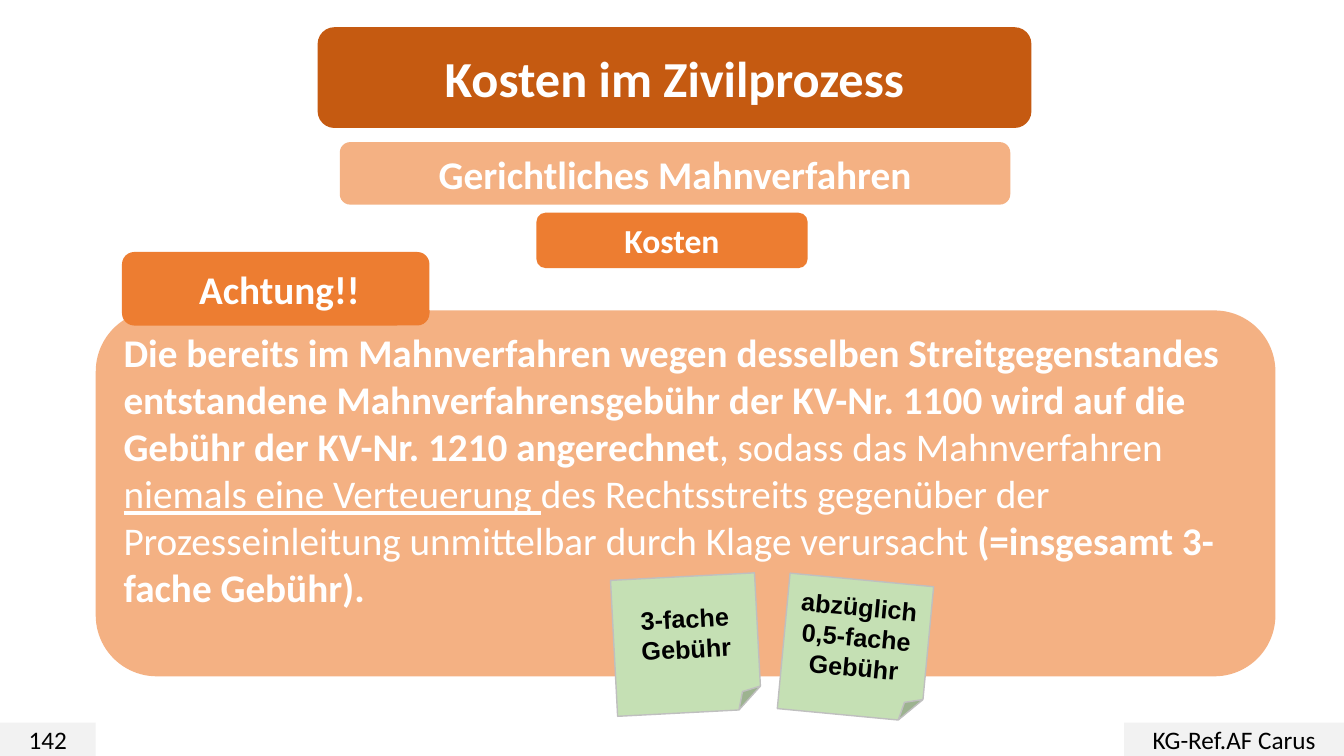
from pptx import Presentation
from pptx.dml.color import RGBColor
from pptx.enum.shapes import MSO_SHAPE
from pptx.enum.text import MSO_ANCHOR, PP_ALIGN
from pptx.util import Inches, Pt

WHITE = RGBColor(0xFF, 0xFF, 0xFF)
BLACK = RGBColor(0x00, 0x00, 0x00)
DARK_ORANGE = RGBColor(0xC5, 0x5A, 0x11)
ORANGE = RGBColor(0xED, 0x7D, 0x31)
PEACH = RGBColor(0xF4, 0xB1, 0x83)
GREEN = RGBColor(0xC5, 0xE0, 0xB4)
LIGHT_GRAY = RGBColor(0xF2, 0xF2, 0xF2)
GRAY = RGBColor(0xBF, 0xBF, 0xBF)


class SlideBuilder:
    font = "Calibri"
    note_font = "Arial"

    def __init__(self, prs):
        self.slide = prs.slides.add_slide(prs.slide_layouts[6])

    def shape(self, kind, box, fill):
        sp = self.slide.shapes.add_shape(kind, *(Inches(v) for v in box))
        sp.shadow.inherit = False
        sp.fill.solid()
        sp.fill.fore_color.rgb = fill
        sp.line.fill.background()
        tf = sp.text_frame
        tf.word_wrap = True
        tf.vertical_anchor = MSO_ANCHOR.MIDDLE
        return sp

    def run(self, p, text, size, color, font=font, bold=False, underline=False):
        r = p.add_run()
        r.text = text
        r.font.name = font
        r.font.size = Pt(size)
        r.font.color.rgb = color
        r.font.bold = bold
        r.font.underline = underline

    def heading(self, text, box, fill, size):
        sp = self.shape(MSO_SHAPE.ROUNDED_RECTANGLE, box, fill)
        p = sp.text_frame.paragraphs[0]
        p.alignment = PP_ALIGN.CENTER
        self.run(p, text, size, WHITE, bold=True)
        return sp

    def body(self, runs, box):
        sp = self.shape(MSO_SHAPE.ROUNDED_RECTANGLE, box, PEACH)
        tf = sp.text_frame
        tf.margin_bottom = Inches(0.52)
        p = tf.paragraphs[0]
        p.alignment = PP_ALIGN.LEFT
        for text, bold, underline in runs:
            self.run(p, text, 28, WHITE, bold=bold, underline=underline)

    def footer(self, text, left, width):
        sp = self.shape(MSO_SHAPE.RECTANGLE, (left, 7.17, width, 0.33), LIGHT_GRAY)
        p = sp.text_frame.paragraphs[0]
        p.alignment = PP_ALIGN.CENTER
        self.run(p, text, 18, BLACK)

    def note(self, lines, left, top, rotation):
        sp = self.shape(MSO_SHAPE.FOLDED_CORNER, (left, top, 1.43, 1.35), GREEN)
        sp.rotation = rotation
        sp.line.color.rgb = GRAY
        sp.line.width = Pt(1)
        tf = sp.text_frame
        for i, line in enumerate(lines):
            p = tf.add_paragraph() if i else tf.paragraphs[0]
            p.alignment = PP_ALIGN.CENTER
            self.run(p, line, 18, BLACK, font=self.note_font, bold=True)


def main():
    prs = Presentation()
    prs.slide_width = Inches(13.33)
    prs.slide_height = Inches(7.5)
    s = SlideBuilder(prs)

    s.heading("Gerichtliches Mahnverfahren", (3.37, 1.41, 6.65, 0.62), PEACH, 28)
    s.footer("142", 0, 0.95)
    s.footer("KG-Ref.AF Carus", 11.15, 2.18)
    s.heading("Kosten im Zivilprozess", (3.15, 0.27, 7.08, 1), DARK_ORANGE, 36)
    s.heading("Kosten", (5.32, 2.11, 2.69, 0.55), ORANGE, 24)
    s.body([
        ("Die bereits im Mahnverfahren wegen desselben Streitgegenstandes "
         "entstandene Mahnverfahrensgebühr der KV-Nr. 1100 wird auf die "
         "Gebühr der KV-Nr. 1210 angerechnet", True, False),
        (", sodass das Mahnverfahren ", False, False),
        ("niemals eine Verteuerung ", False, True),
        ("des Rechtsstreits gegenüber der Prozesseinleitung unmittelbar "
         "durch Klage verursacht ", False, False),
        ("(=insgesamt 3-fache Gebühr).", True, False),
    ], (0.95, 3.08, 11.7, 3.63))
    warning = s.heading("Achtung!!", (1.21, 2.5, 3.05, 0.73), ORANGE, 28)
    warning.text_frame.margin_left = Inches(0.17)
    s.note(["3-fache", "Gebühr"], 6.09, 5.72, 357)
    s.note(["abzüglich", "0,5-fache", "Gebühr"], 7.77, 5.75, 5.4)

    prs.save("out.pptx")


if __name__ == "__main__":
    main()
